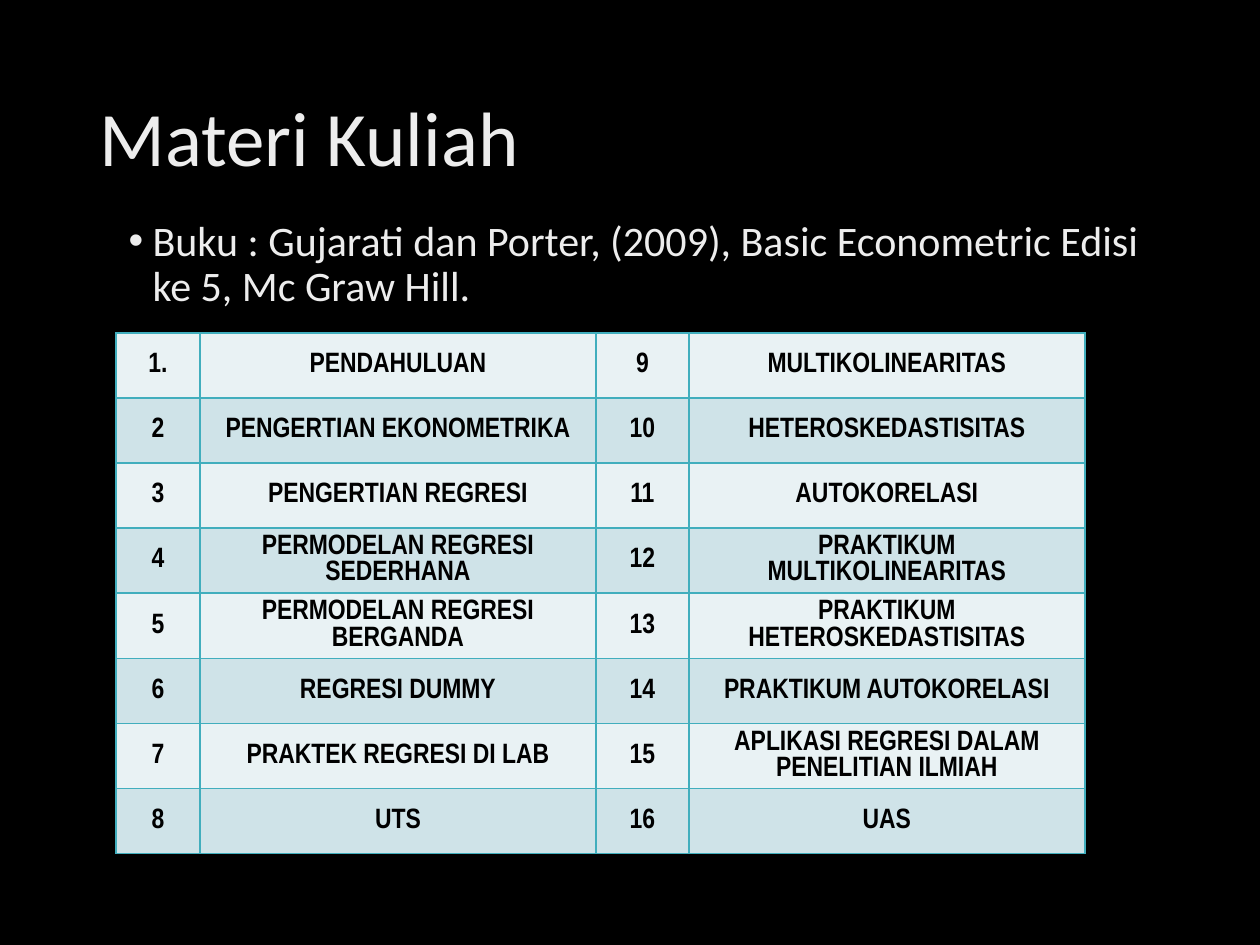
from dataclasses import dataclass

from lxml.etree import SubElement
from pptx import Presentation
from pptx.dml.color import RGBColor
from pptx.enum.text import MSO_ANCHOR, PP_ALIGN
from pptx.oxml.ns import qn
from pptx.util import Emu, Pt

PX_PER_INCH = 126


@dataclass(frozen=True)
class Theme:
    background: str = "000000"
    light_text: str = "EDEDED"
    cell_text: str = "000000"
    row_fills: tuple = ("E9F2F4", "CFE3E8")
    border: str = "41AEBD"
    border_width: int = 1
    text_font: str = "Calibri"
    table_font: str = "Arial Narrow"
    title_size: int = 44
    body_size: int = 24
    table_size: int = 16


THEME = Theme()

TOPICS = [
    "PENDAHULUAN",
    "PENGERTIAN EKONOMETRIKA",
    "PENGERTIAN REGRESI",
    "PERMODELAN REGRESI SEDERHANA",
    "PERMODELAN REGRESI BERGANDA",
    "REGRESI DUMMY",
    "PRAKTEK REGRESI DI LAB",
    "UTS",
    "MULTIKOLINEARITAS",
    "HETEROSKEDASTISITAS",
    "AUTOKORELASI",
    "PRAKTIKUM MULTIKOLINEARITAS",
    "PRAKTIKUM HETEROSKEDASTISITAS",
    "PRAKTIKUM AUTOKORELASI",
    "APLIKASI REGRESI DALAM PENELITIAN ILMIAH",
    "UAS",
]


def px(length):
    return Emu(round(length * 914400 / PX_PER_INCH))


def place(shape, box):
    shape.left, shape.top, shape.width, shape.height = map(px, box)


def write_text(frame, text, *, size, color, font, bold=False,
               align=PP_ALIGN.LEFT, line_spacing=None, bullet_indent=None):
    paragraph = frame.paragraphs[0]
    paragraph.text = text
    paragraph.alignment = align
    paragraph.space_before = Pt(0)
    if line_spacing:
        paragraph.line_spacing = line_spacing
    if bullet_indent:
        properties = paragraph._p.get_or_add_pPr()
        properties.set("marL", str(px(bullet_indent)))
        properties.set("indent", str(-px(bullet_indent)))
        SubElement(properties, qn("a:buFont"), typeface="Arial")
        SubElement(properties, qn("a:buChar"), char="•")
    run_font = paragraph.runs[0].font
    run_font.name = font
    run_font.size = Pt(size)
    run_font.bold = bold
    run_font.color.rgb = RGBColor.from_string(color)


def add_title(slide, box):
    title = slide.shapes.title
    place(title, box)
    title.text_frame.vertical_anchor = MSO_ANCHOR.MIDDLE
    write_text(title.text_frame, "Materi Kuliah", size=THEME.title_size,
               color=THEME.light_text, font=THEME.text_font, line_spacing=0.9)


def add_book(slide, box):
    body = slide.placeholders[1]
    place(body, box)
    write_text(body.text_frame,
               "Buku : Gujarati dan Porter, (2009), Basic Econometric Edisi ke 5, Mc Graw Hill.",
               size=THEME.body_size, color=THEME.light_text, font=THEME.text_font,
               line_spacing=0.9, bullet_indent=24)


def set_borders(cell):
    properties = cell._tc.get_or_add_tcPr()
    for position, side in enumerate(("lnL", "lnR", "lnT", "lnB")):
        line = properties.makeelement(qn(f"a:{side}"), {"w": str(Pt(THEME.border_width))})
        fill = SubElement(line, qn("a:solidFill"))
        SubElement(fill, qn("a:srgbClr"), val=THEME.border)
        properties.insert(position, line)


def add_topics(slide, box, column_widths):
    row_count = len(TOPICS) // 2
    frame = slide.shapes.add_table(row_count, len(column_widths), *map(px, box))
    table = frame.table
    table.first_row = False
    table.horz_banding = False
    for column, width in zip(table.columns, column_widths):
        column.width = px(width)

    for index, row in enumerate(table.rows):
        row.height = px(box[3] / row_count)
        second = index + row_count
        first_number = "1." if index == 0 else str(index + 1)
        texts = (first_number, TOPICS[index], str(second + 1), TOPICS[second])
        for cell, text in zip(row.cells, texts):
            cell.vertical_anchor = MSO_ANCHOR.MIDDLE
            cell.fill.solid()
            cell.fill.fore_color.rgb = RGBColor.from_string(THEME.row_fills[index % 2])
            set_borders(cell)
            write_text(cell.text_frame, text, size=THEME.table_size,
                       color=THEME.cell_text, font=THEME.table_font,
                       bold=True, align=PP_ALIGN.CENTER)


def main():
    presentation = Presentation()
    presentation.slide_width = px(1260)
    presentation.slide_height = px(945)
    slide = presentation.slides.add_slide(presentation.slide_layouts[1])
    slide.background.fill.solid()
    slide.background.fill.fore_color.rgb = RGBColor.from_string(THEME.background)

    # Heading and reference book
    add_title(slide, (87, 50, 1086, 183))
    add_book(slide, (116, 214, 1057, 600))
    # Numbered topics, in two halves side by side
    add_topics(slide, (116, 333, 969, 520), (84, 396, 93, 396))

    presentation.save("out.pptx")


if __name__ == "__main__":
    main()
